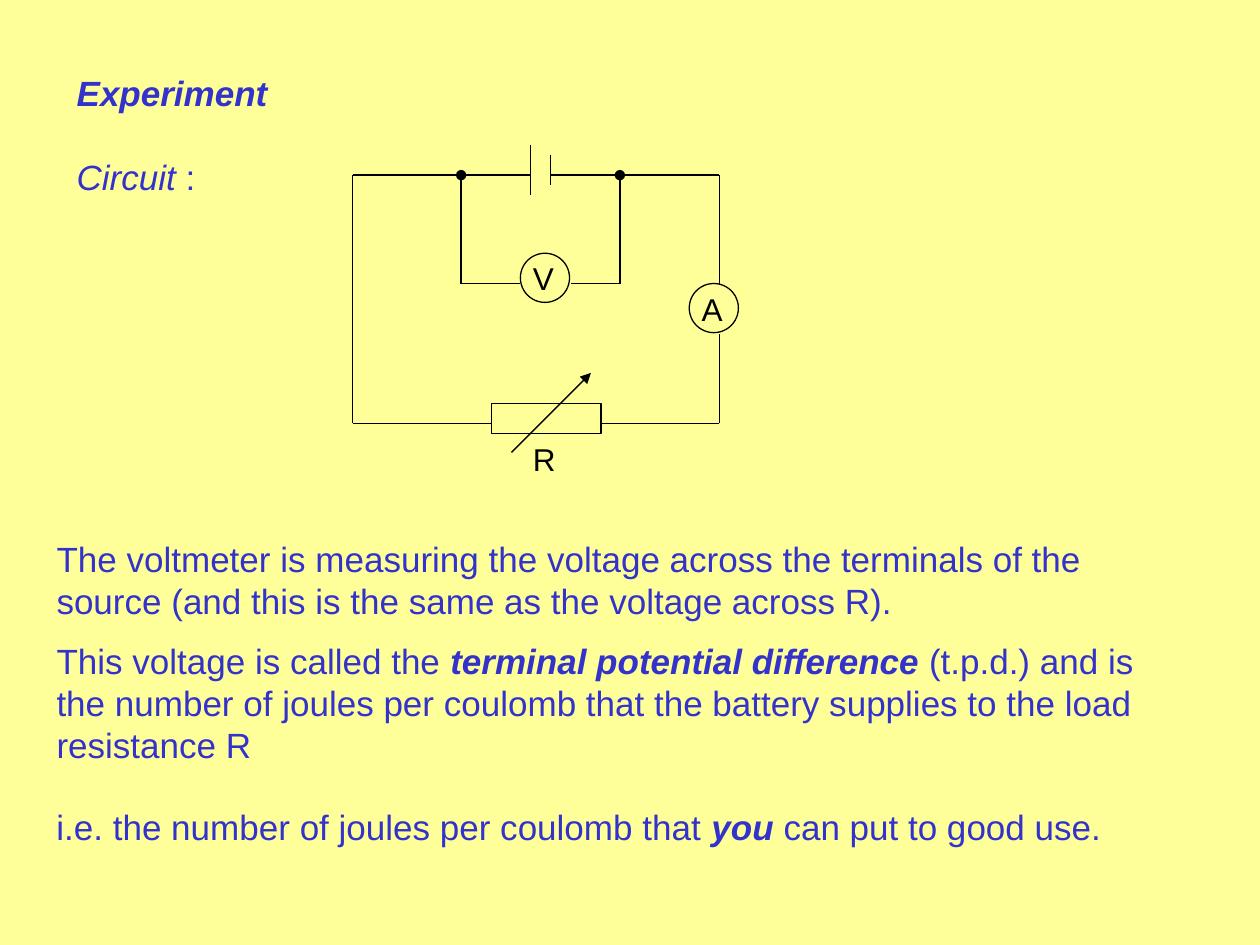
from lxml.etree import SubElement
from pptx import Presentation
from pptx.dml.color import RGBColor
from pptx.enum.shapes import MSO_CONNECTOR, MSO_SHAPE
from pptx.oxml.ns import qn
from pptx.util import Inches, Pt

PAPER, BLUE, BLACK = "FFFF99", "3333CC", "000000"
LEFT, RIGHT, TOP, BOTTOM = 2.8, 5.71, 1.39, 3.36
TAP_LEFT, TAP_RIGHT, TAP_BOTTOM = 3.66, 4.92, 2.25
CELL_LEFT, CELL_RIGHT = 4.21, 4.37
METER = 0.39


def rgb(value):
    return RGBColor.from_string(value)


def add_text(slide, box, paragraphs, size=20, color=BLUE, gap=0, inset=0.05):
    sp = slide.shapes.add_textbox(*map(Inches, box))
    tf = sp.text_frame
    tf.word_wrap = True
    tf.margin_top = Inches(inset)
    for i, runs in enumerate(paragraphs):
        p = tf.paragraphs[0] if i == 0 else tf.add_paragraph()
        p.space_before = Pt(gap if i else 0)
        for text, bold, italic in runs:
            r = p.add_run()
            r.text = text
            r.font.name = "Arial"
            r.font.size = Pt(size)
            r.font.bold = bold
            r.font.italic = italic
            r.font.color.rgb = rgb(color)


def add_label(slide, text, x, y, width=METER):
    add_text(slide, (x, y, width, 0.4), [[(text, False, False)]], size=18, color=BLACK)


def add_line(slide, start, end, head=None, tail=None):
    points = map(Inches, (*start, *end))
    sp = slide.shapes.add_connector(MSO_CONNECTOR.STRAIGHT, *points)
    sp.line.color.rgb = rgb(BLACK)
    sp.line.width = Pt(0.75)
    ln = sp.line._get_or_add_ln()
    for tag, kind in (("a:headEnd", head), ("a:tailEnd", tail)):
        if kind:
            SubElement(ln, qn(tag), type=kind)
    SubElement(sp._element.spPr, qn("a:effectLst"))


def add_wire(slide, *points, head=None):
    for i, (start, end) in enumerate(zip(points, points[1:])):
        add_line(slide, start, end, head=None if i else head)


def add_outline(slide, kind, box):
    sp = slide.shapes.add_shape(kind, *map(Inches, box))
    sp.shadow.inherit = False
    sp.fill.background()
    sp.line.color.rgb = rgb(BLACK)
    sp.line.width = Pt(0.75)


def add_meter(slide, letter, x, y):
    add_outline(slide, MSO_SHAPE.OVAL, (x, y, METER, METER))
    add_label(slide, letter, x, y)


def add_circuit(slide):
    add_outline(slide, MSO_SHAPE.RECTANGLE, (3.9, 3.2, 0.87, 0.24))
    add_line(slide, (4.06, 3.59), (4.69, 2.96), tail="triangle")
    add_label(slide, "R", 4.13, 3.44, width=0.42)
    add_meter(slide, "A", 5.47, 2.25)
    add_meter(slide, "V", 4.13, 2.01)
    add_line(slide, (CELL_LEFT, 1.15), (CELL_LEFT, 1.55))
    add_line(slide, (CELL_RIGHT, 1.23), (CELL_RIGHT, 1.47))
    add_wire(slide, (4.76, BOTTOM), (RIGHT, BOTTOM), (RIGHT, 2.65))
    add_wire(slide, (RIGHT, 2.25), (RIGHT, TOP), (CELL_RIGHT, TOP))
    add_wire(slide, (3.9, BOTTOM), (LEFT, BOTTOM), (LEFT, TOP), (CELL_LEFT, TOP))
    for x, meter_edge in ((TAP_LEFT, 4.13), (TAP_RIGHT, 4.53)):
        add_wire(slide, (x, TOP), (x, TAP_BOTTOM), (meter_edge, TAP_BOTTOM), head="oval")


def main():
    prs = Presentation()
    prs.slide_width, prs.slide_height = Inches(10), Inches(7.5)
    slide = prs.slides.add_slide(prs.slide_layouts[6])
    slide.background.fill.solid()
    slide.background.fill.fore_color.rgb = rgb(PAPER)

    add_text(slide, (0.51, 0.52, 4.88, 1.1), [
        [("Experiment", True, True)],
        [("Circuit", False, True), (" :", False, False)],
    ], gap=24)
    add_circuit(slide)
    add_text(slide, (0.35, 4.22, 9.21, 1.93), [
        [("The voltmeter is measuring the voltage across the terminals of the source "
          "(and this is the same as the voltage across R).", False, False)],
        [("This voltage is called the ", False, False),
         ("terminal potential difference", True, True),
         (" (t.p.d.) and is the number of joules per coulomb that the battery "
          "supplies to the load resistance R", False, False)],
    ], gap=10)
    add_text(slide, (0.35, 5.99, 9.06, 0.83), [
        [("i.e. the number of joules per coulomb that ", False, False),
         ("you", True, True),
         (" can put to good use.", False, False)],
    ], inset=0.4)
    prs.save("out.pptx")


if __name__ == "__main__":
    main()
